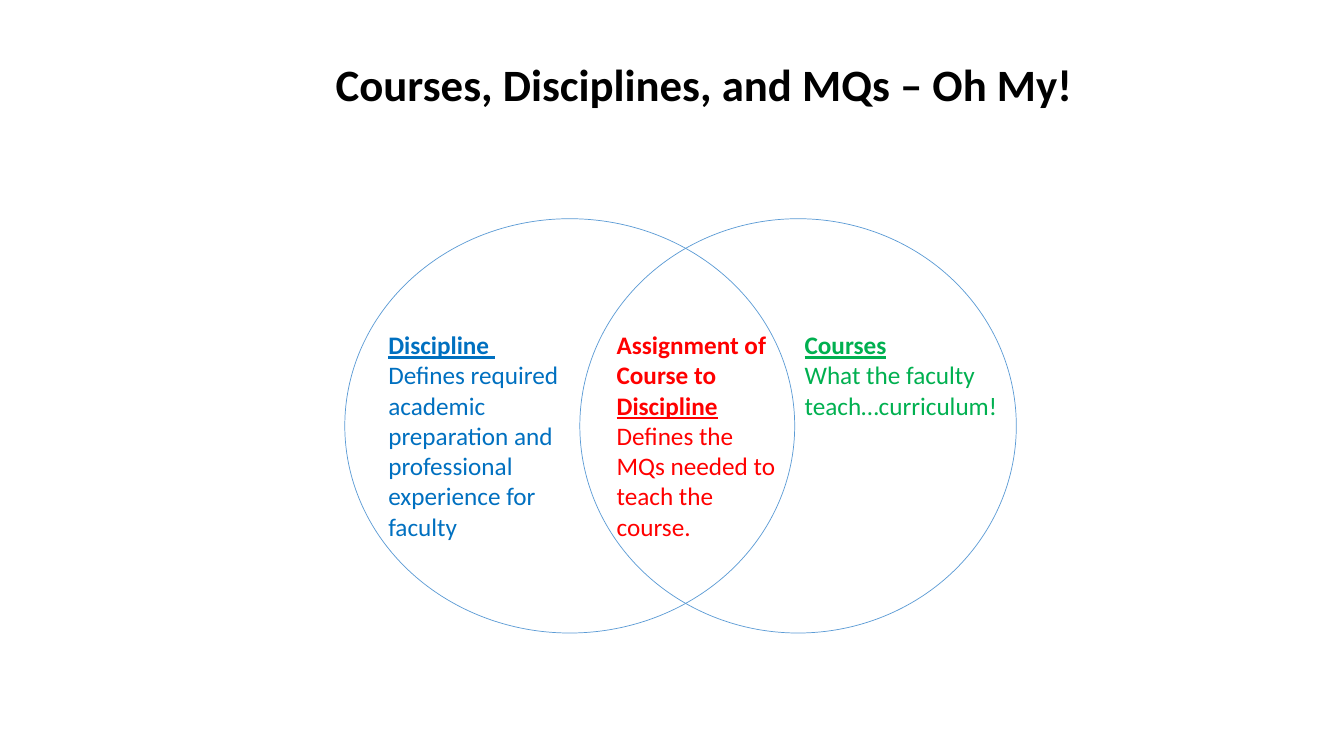
"""Build a slide with a two-circle diagram of disciplines and courses."""
from collections import namedtuple
from dataclasses import dataclass

import pptx
import pptx.dml.color
import pptx.enum.shapes
import pptx.enum.text
import pptx.util

Box = namedtuple("Box", "left top width height")


@dataclass(frozen=True)
class Theme:
    """Colours, font and sizes of the slide."""
    font: str = "Calibri"
    title_size: int = 32
    label_size: int = 18
    line_width: float = 0.5
    outline: str = "5B9BD5"
    title: str = "000000"
    discipline: str = "0070C0"
    assignment: str = "FF0000"
    courses: str = "00B050"


THEME = Theme()
HEADING = {"bold": True, "underline": True}
BODY = {"bold": False, "underline": False}
TITLE_BOX = Box(3.14, 0.51, 7.69, 0.64)
CIRCLES_BOX = Box(3.42, 2.17, 6.66, 4.11)
LABELS_BOX = Box(3.42, 3.22, 6.66, 2.52)
CIRCLES = [(0, 0.67), (0.35, 0.65)]
LABELS = [
    (0.05, 0.34, 0.88, THEME.discipline, [
        [("Discipline", HEADING), (" ", {"bold": False, "underline": True})],
        [("Defines required academic preparation and professional "
          "experience for faculty", BODY)],
    ]),
    (0.67, 0.33, 0.4, THEME.courses, [
        [("Courses", HEADING)],
        [("What the faculty teach…curriculum!", BODY)],
    ]),
    (0.39, 0.27, 1, THEME.assignment, [
        [("Assignment of Course to ", {"bold": True}),
         ("Discipline", HEADING),
         (" Defines the MQs needed to teach the course.", BODY)],
    ]),
]


def share(box, left, width, height=1):
    """Return the part of a box given by shares of its width and height."""
    return Box(box.left + left * box.width, box.top,
               width * box.width, height * box.height)


def inches(box):
    """Return the four lengths of a box as slide units."""
    return [pptx.util.Inches(length) for length in box]


def add_text(page, box, paragraphs, size, color, align=None):
    """Place paragraphs of formatted spans in a wrapping text box."""
    frame = page.shapes.add_textbox(*inches(box)).text_frame
    frame.word_wrap = True
    for index, spans in enumerate(paragraphs):
        para = frame.paragraphs[0] if index == 0 else frame.add_paragraph()
        para.alignment = align
        for text, values in spans:
            span = para.add_run()
            span.text = text
            span.font.color.rgb = pptx.dml.color.RGBColor.from_string(color)
            font_values = {"name": THEME.font, "size": pptx.util.Pt(size), **values}
            for name, value in font_values.items():
                setattr(span.font, name, value)


def add_title(page, box):
    """Place the centred slide title."""
    add_text(page, box,
             [[("Courses, Disciplines, and MQs – Oh My!", {"bold": True})]],
             THEME.title_size, THEME.title, pptx.enum.text.PP_ALIGN.CENTER)


def add_circles(page, box):
    """Draw the two overlapping outlines."""
    for left, width in CIRCLES:
        circle = page.shapes.add_shape(pptx.enum.shapes.MSO_SHAPE.OVAL,
                                       *inches(share(box, left, width)))
        circle.shadow.inherit = False
        circle.fill.background()
        circle.line.color.rgb = pptx.dml.color.RGBColor.from_string(THEME.outline)
        circle.line.width = pptx.util.Pt(THEME.line_width)


def add_labels(page, box):
    """Place a label in each region of the diagram."""
    for left, width, height, color, paragraphs in LABELS:
        add_text(page, share(box, left, width, height), paragraphs,
                 THEME.label_size, color)


def main():
    """Build and save the deck."""
    deck = pptx.Presentation()
    deck.slide_width = pptx.util.Inches(13.33)
    deck.slide_height = pptx.util.Inches(7.5)
    page = deck.slides.add_slide(deck.slide_layouts[6])
    add_circles(page, CIRCLES_BOX)
    add_labels(page, LABELS_BOX)
    add_title(page, TITLE_BOX)
    deck.save("out.pptx")


if __name__ == "__main__":
    main()
